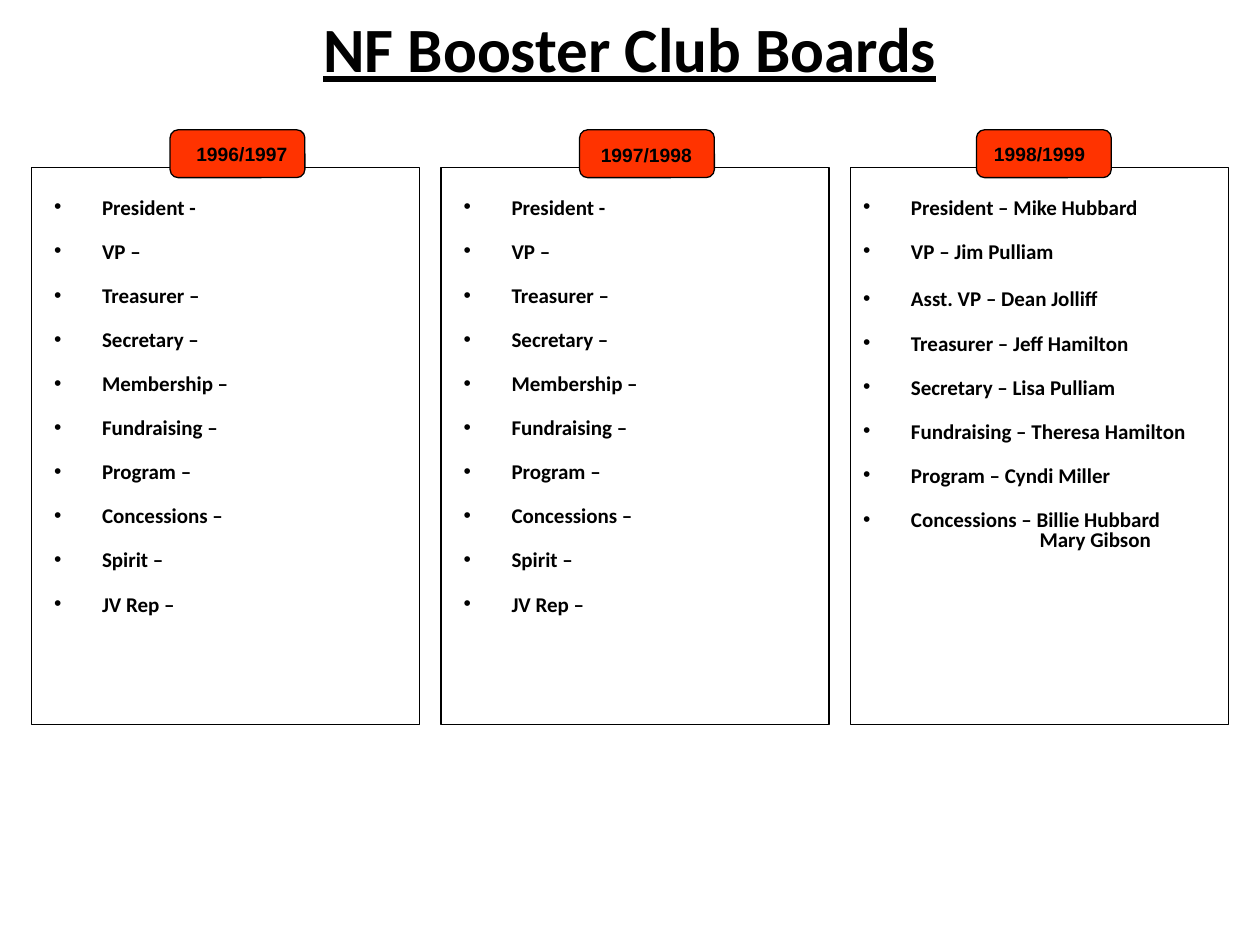
from lxml import etree
from pptx import Presentation
from pptx import util as u
from pptx.dml.color import RGBColor
from pptx.enum import shapes, text
from pptx.oxml.ns import qn

COLORS = {"ink": "000000", "tag": "FF3300"}
OFFICES = ["President -", "VP –", "Treasurer –", "Secretary –", "Membership –",
           "Fundraising –", "Program –", "Concessions –", "Spirit –", "JV Rep –"]
BOARD_1998 = ["President – Mike Hubbard", "VP – Jim Pulliam",
              "Asst. VP – Dean Jolliff", "Treasurer – Jeff Hamilton",
              "Secretary – Lisa Pulliam", "Fundraising – Theresa Hamilton",
              "Program – Cyndi Miller", "Concessions – Billie Hubbard"]
SECOND_NAME = "Mary Gibson"

# year, panel left, panel width, tag left, label left, label top, list left, entries
BOARDS = [
    ("1996/1997", 0.25, 3.08, 1.35, 1.46, 1.08, 0.33, OFFICES),
    ("1997/1998", 3.5, 3.08, 4.6, 4.67, 1.09, 3.58, OFFICES),
    ("1998/1999", 6.75, 3, 7.75, 7.79, 1.08, 6.75, BOARD_1998),
]
PANEL_TOP, PANEL_HEIGHT = 1.33, 4.42


def color(name):
    return RGBColor.from_string(COLORS[name])


def place(shape, left, top, width, height):
    shape.left, shape.top = u.Inches(left), u.Inches(top)
    shape.width, shape.height = u.Inches(width), u.Inches(height)


def format_runs(paragraph, font_name, size):
    for run in paragraph.runs:
        run.font.name, run.font.size, run.font.bold = font_name, u.Pt(size), True
        run.font.color.rgb = color("ink")


def set_indent(paragraph, left, first, bullet=None):
    props = paragraph._p.get_or_add_pPr()
    props.set("marL", str(u.Inches(left)))
    props.set("indent", str(u.Inches(first)))
    if bullet:
        etree.SubElement(props, qn("a:buFont")).set("typeface", "Arial")
        etree.SubElement(props, qn("a:buChar")).set("char", bullet)
    else:
        etree.SubElement(props, qn("a:buNone"))


def add_box(slide, preset, left, top, width, height, fill=None):
    box = slide.shapes.add_shape(preset, u.Inches(left), u.Inches(top),
                                 u.Inches(width), u.Inches(height))
    box.shadow.inherit = False
    box.line.color.rgb = color("ink")
    box.line.width = u.Pt(0.75)
    if fill:
        box.fill.solid()
        box.fill.fore_color.rgb = color(fill)
    else:
        box.fill.background()
    return box


def add_label(slide, year, left, top):
    label = slide.shapes.add_textbox(u.Inches(left), u.Inches(top),
                                     u.Inches(0.96), u.Inches(0.29))
    label.text_frame.word_wrap = True
    label.text_frame.text = year
    format_runs(label.text_frame.paragraphs[0], "Arial", 11)


def fill_title(title):
    place(title, 0.5, -0.25, 9, 1.25)
    frame = title.text_frame
    frame.text = "NF Booster Club Boards"
    frame.auto_size = text.MSO_AUTO_SIZE.NONE
    frame.vertical_anchor = text.MSO_ANCHOR.MIDDLE
    heading = frame.paragraphs[0]
    heading.alignment = text.PP_ALIGN.CENTER
    format_runs(heading, "Calibri", 36)
    heading.runs[0].font.underline = True


def fill_list(body, left, width, entries):
    place(body, left, PANEL_TOP, width, PANEL_HEIGHT)
    frame = body.text_frame
    frame.auto_size = text.MSO_AUTO_SIZE.NONE
    frame.vertical_anchor = text.MSO_ANCHOR.TOP
    frame.margin_top = u.Inches(0.25)
    for number, entry in enumerate(entries):
        office = frame.add_paragraph() if number else frame.paragraphs[0]
        office.text = entry
        office.line_spacing = 0.8
        gap = 15.7 if entry.startswith("Asst.") else 13.7
        office.space_before = u.Pt(gap if number else 0)
        set_indent(office, 0.38, -0.38, "•")
        format_runs(office, "Calibri", 12)


def add_second_name(body):
    """Align the second concessions name under the first."""
    name = body.text_frame.add_paragraph()
    name.text = SECOND_NAME
    name.line_spacing = 0.8
    name.space_before = u.Pt(0)
    set_indent(name, 1.4, 0)
    format_runs(name, "Calibri", 12)


def main():
    deck = Presentation()
    deck.slide_width, deck.slide_height = u.Inches(10), u.Inches(7.5)
    # The comparison layout offers a title and four bodies
    slide = deck.slides.add_slide(deck.slide_layouts[4])
    fill_title(slide.shapes.title)
    bodies = [holder for holder in slide.placeholders
              if 1 <= holder.placeholder_format.idx <= 4]
    spare = bodies.pop()
    spare._element.getparent().remove(spare._element)

    # One panel, year tag and list per board
    for body, board in zip(bodies, BOARDS):
        year, left, width, tag_left, label_left, label_top, list_left, entries = board
        add_box(slide, shapes.MSO_SHAPE.RECTANGLE, left, PANEL_TOP, width, PANEL_HEIGHT)
        tag = add_box(slide, shapes.MSO_SHAPE.ROUNDED_RECTANGLE,
                      tag_left, 1.03, 1.07, 0.38, "tag")
        tag.adjustments[0] = 0.17
        add_label(slide, year, label_left, label_top)
        fill_list(body, list_left, width, entries)
    add_second_name(bodies[-1])

    deck.save("out.pptx")


if __name__ == "__main__":
    main()
